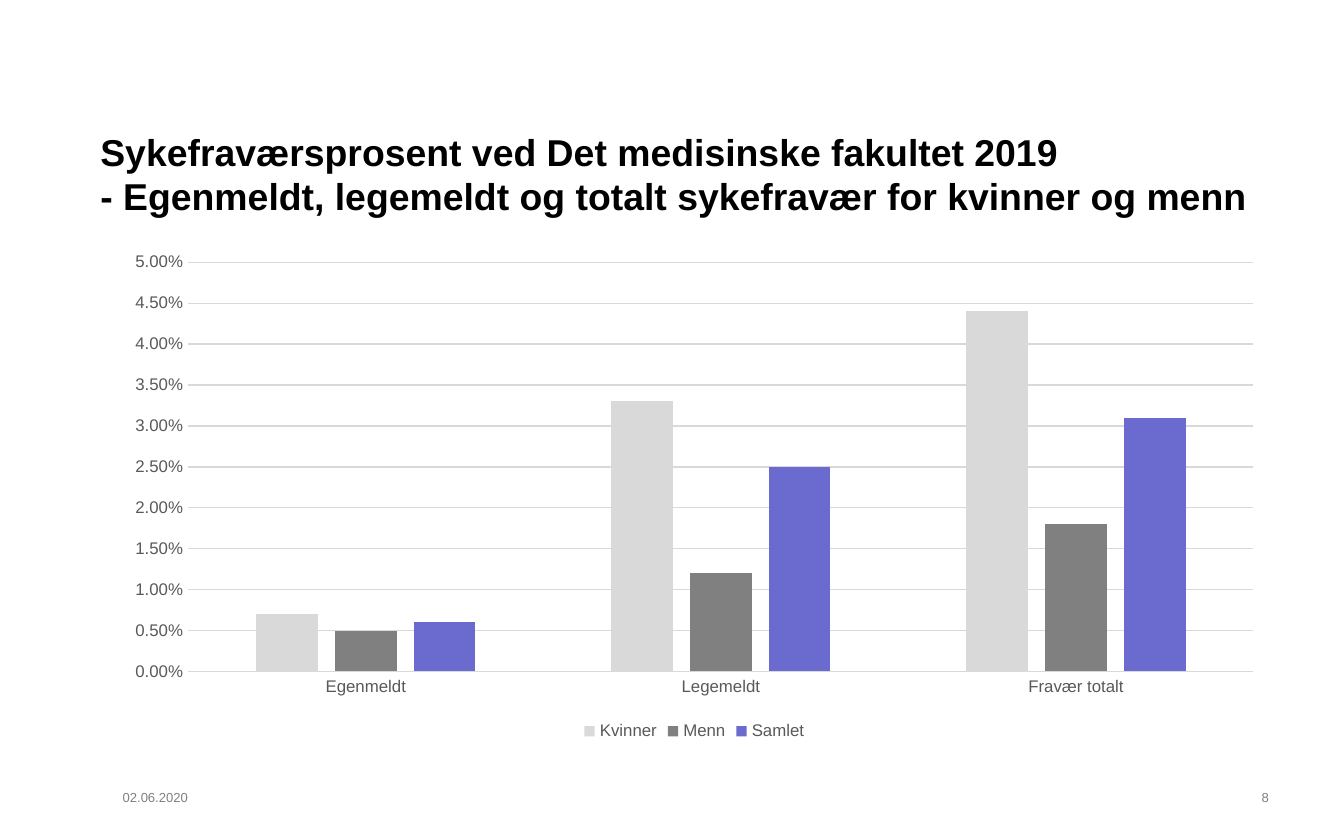
from pptx import Presentation
from pptx.chart.data import CategoryChartData
from pptx.dml.color import RGBColor
from pptx.enum.chart import XL_CHART_TYPE, XL_LEGEND_POSITION, XL_TICK_MARK
from pptx.enum.text import MSO_ANCHOR, PP_ALIGN
from pptx.util import Inches, Pt

COLUMNS = XL_CHART_TYPE.COLUMN_CLUSTERED
BOTTOM = XL_LEGEND_POSITION.BOTTOM
NO_TICK = XL_TICK_MARK.NONE
MIDDLE, TOP = MSO_ANCHOR.MIDDLE, MSO_ANCHOR.TOP
LEFT, RIGHT = PP_ALIGN.LEFT, PP_ALIGN.RIGHT

COLORS = {"title": "000000", "footer": "808080", "axis": "595959", "grid": "D9D9D9",
          "Kvinner": "D9D9D9", "Menn": "808080", "Samlet": "6B6BCF"}

deck = Presentation()
deck.slide_width, deck.slide_height = Inches(10), Inches(6.25)
page = deck.slides.add_slide(deck.slide_layouts[5])
CELL = deck.slide_width / 24  # square grid of 24 columns and 15 rows


def cells(*counts):
    return [round(count * CELL) for count in counts]


def style_font(font, size, color, bold=False):
    for name, value in {"name": "Arial", "size": Pt(size), "bold": bold}.items():
        setattr(font, name, value)
    font.color.rgb = RGBColor.from_string(COLORS[color])


# Title and footer
title = page.shapes.title
title.left, title.top, title.width, title.height = cells(1.6, 1.85, 21.2, 2.5)
date = page.shapes.add_textbox(*cells(2, 14, 5, 1))
number = page.shapes.add_textbox(*cells(21.05, 14, 1.8, 1))

texts = [
    (title, "Sykefraværsprosent ved Det medisinske fakultet 2019\v"
            "- Egenmeldt, legemeldt og totalt sykefravær for kvinner og menn",
     20, "title", True, LEFT, MIDDLE),
    (date, "02.06.2020", 7, "footer", False, LEFT, TOP),
    (number, "8", 7, "footer", False, RIGHT, TOP),
]
for box, text, size, color, bold, align, anchor in texts:
    frame = box.text_frame
    settings = {"word_wrap": True, "vertical_anchor": anchor,
                "margin_left": Inches(0.08), "margin_right": Inches(0.08),
                "margin_top": Inches(0.04), "margin_bottom": Inches(0.04)}
    for name, value in settings.items():
        setattr(frame, name, value)
    para = frame.paragraphs[0]
    para.text = text
    para.alignment = align
    for span in para.runs:
        style_font(span.font, size, color, bold)

# Sick leave chart
data = CategoryChartData(number_format="0.00%")
data.categories = ["Egenmeldt", "Legemeldt", "Fravær totalt"]
data.add_series("Kvinner", [0.007, 0.033, 0.044])
data.add_series("Menn", [0.005, 0.012, 0.018])
data.add_series("Samlet", [0.006, 0.025, 0.031])
chart = page.shapes.add_chart(COLUMNS, *cells(2, 4.33, 20.8, 9), data).chart
chart.has_title = False
style_font(chart.font, 10, "title")

plot = chart.plots[0]
plot.gap_width, plot.overlap, plot.vary_by_categories = 219, -27, False
for series in plot.series:
    series.format.fill.solid()
    series.format.fill.fore_color.rgb = RGBColor.from_string(COLORS[series.name])
    series.invert_if_negative = False

chart.has_legend = True
chart.legend.position = BOTTOM
chart.legend.include_in_layout = False
style_font(chart.legend.font, 9, "axis")

for axis in (chart.category_axis, chart.value_axis):
    axis.major_tick_mark = axis.minor_tick_mark = NO_TICK
    style_font(axis.tick_labels.font, 9, "axis")

values = chart.value_axis
values.minimum_scale, values.maximum_scale, values.major_unit = 0, 0.05, 0.005
values.tick_labels.number_format = "0.00%"
values.tick_labels.number_format_is_linked = False
values.format.line.fill.background()
for line in (chart.category_axis.format.line, values.major_gridlines.format.line):
    line.color.rgb = RGBColor.from_string(COLORS["grid"])
    line.width = Pt(0.75)

deck.save("out.pptx")
